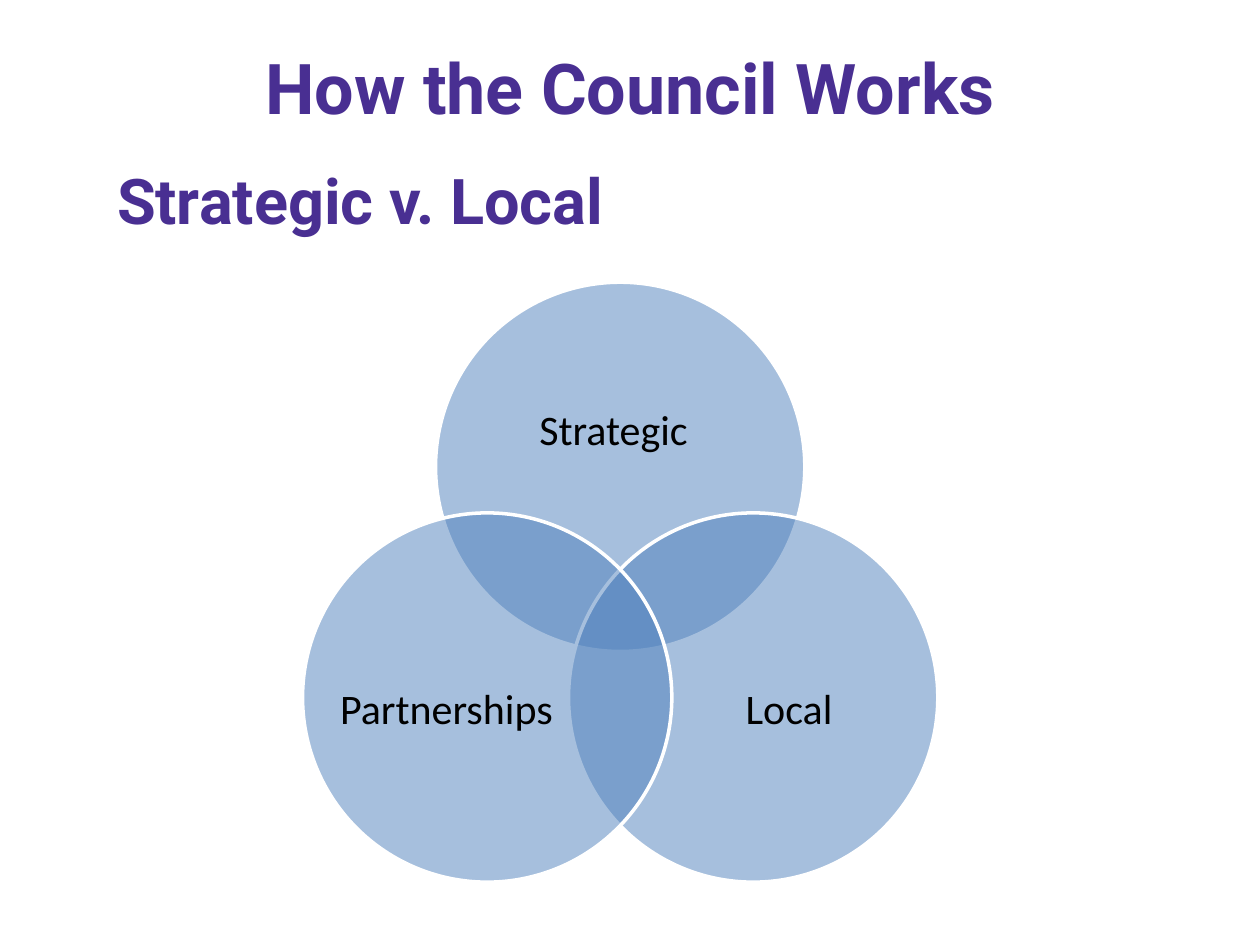
import pptx
import pptx.dml.color
import pptx.enum.shapes
import pptx.enum.text
import pptx.oxml
import pptx.util
from lxml import etree

Pt = pptx.util.Pt
ALIGN = pptx.enum.text.PP_ALIGN
ANCHOR = pptx.enum.text.MSO_ANCHOR

PURPLE, BLUE, WHITE, BLACK = "492F92", "4F81BD", "FFFFFF", "000000"

HEADINGS = [
    ("How the Council Works", (36, 21.6, 648, 55.4), 40, ALIGN.CENTER, ANCHOR.MIDDLE),
    ("Strategic v. Local", (59.8, 88.6, 601.2, 45.4), 36, ALIGN.LEFT, ANCHOR.TOP),
]

DIAMETER = 211
CENTER_X, TOP_Y = 354.4, 161.3
STEP_X, STEP_Y = 76, 131.8

# Columns: label, horizontal step, vertical step, label area as shares of the diameter
CIRCLES = [
    ("Strategic ", 0, 0, (0.13, 0.18, 0.73, 0.45)),
    ("Local ", 1, 1, (0.31, 0.26, 0.6, 0.55)),
    ("Partnerships", -1, 1, (0.09, 0.26, 0.6, 0.55)),
]


def color(value):
    return pptx.dml.color.RGBColor.from_string(value)


def add_text(slide, text, box, font_name, size, text_color, align, anchor):
    shape = slide.shapes.add_textbox(*map(Pt, box))
    frame = shape.text_frame
    frame.word_wrap = True
    frame.vertical_anchor = anchor
    paragraph = frame.paragraphs[0]
    paragraph.text = text
    paragraph.alignment = align
    paragraph.font.name = font_name
    paragraph.font.size = Pt(size)
    paragraph.font.color.rgb = color(text_color)
    return frame


def add_circle(slide, left, top):
    shape = slide.shapes.add_shape(
        pptx.enum.shapes.MSO_SHAPE.OVAL, Pt(left), Pt(top), Pt(DIAMETER), Pt(DIAMETER)
    )
    shape.shadow.inherit = False
    shape.fill.solid()
    shape.fill.fore_color.rgb = color(BLUE)
    fill_color = shape.fill._xPr.find(".//" + pptx.oxml.ns.qn("a:srgbClr"))
    etree.SubElement(fill_color, pptx.oxml.ns.qn("a:alpha"), val="50000")
    shape.line.color.rgb = color(WHITE)
    shape.line.width = Pt(2)


def add_label(slide, text, left, top, area):
    x, y, width, height = (share * DIAMETER for share in area)
    frame = add_text(slide, text, (left + x, top + y, width, height),
                     "Calibri", 24, BLACK, ALIGN.CENTER, ANCHOR.MIDDLE)
    frame.margin_left = frame.margin_right = frame.margin_top = frame.margin_bottom = 0
    frame.paragraphs[0].line_spacing = 0.9


def main():
    presentation = pptx.Presentation()
    presentation.slide_width, presentation.slide_height = Pt(720), Pt(540)
    slide = presentation.slides.add_slide(presentation.slide_layouts[6])
    for text, box, size, align, anchor in HEADINGS:
        frame = add_text(slide, text, box, "Roboto", size, PURPLE, align, anchor)
        frame.paragraphs[0].font.bold = True
    for text, column, row, area in CIRCLES:
        left = CENTER_X + column * STEP_X - DIAMETER / 2
        top = TOP_Y + row * STEP_Y
        add_circle(slide, left, top)
        add_label(slide, text, left, top, area)
    presentation.save("out.pptx")


if __name__ == "__main__":
    main()
